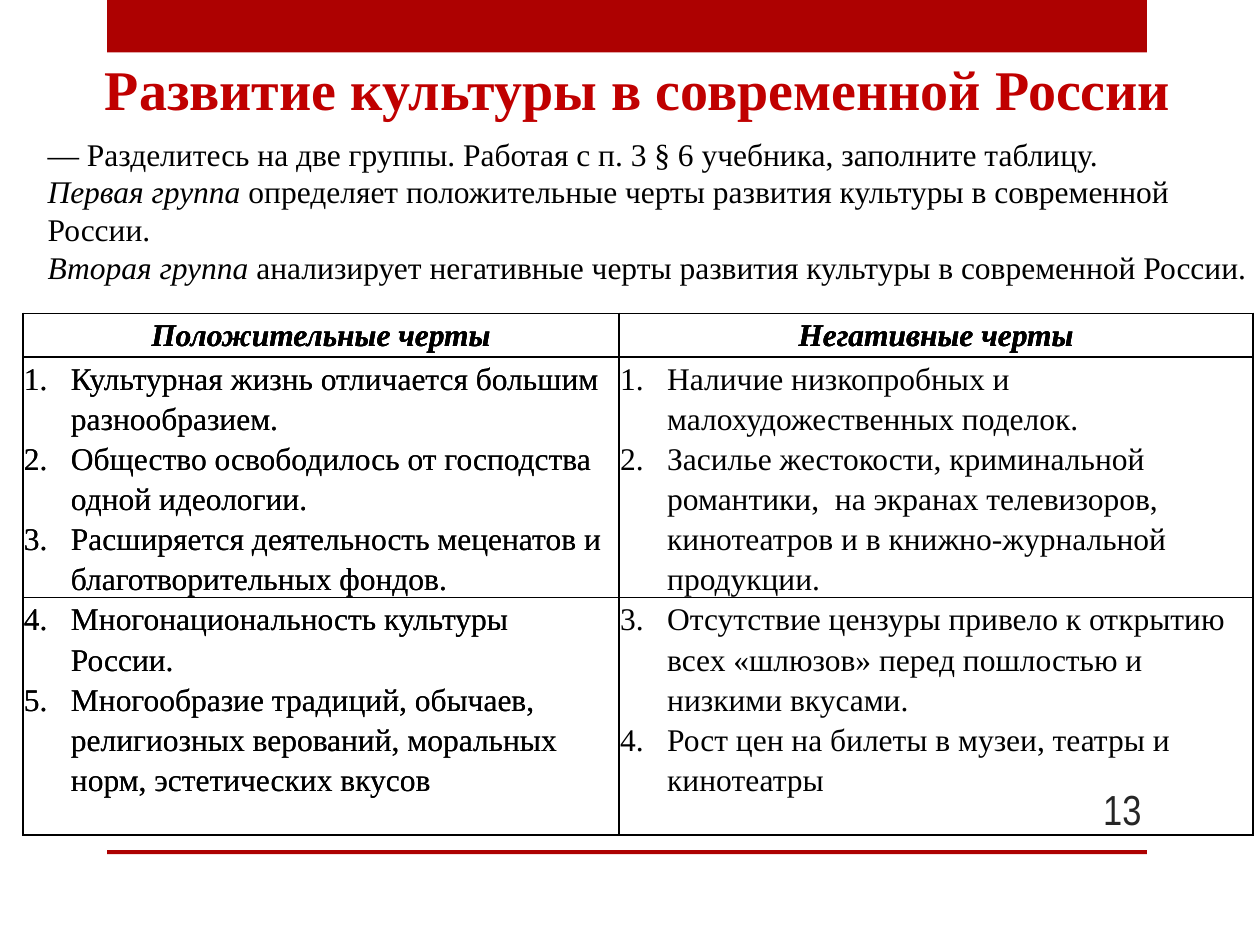
from lxml.etree import SubElement
from pptx import Presentation
from pptx.dml.color import RGBColor
from pptx.enum.shapes import MSO_SHAPE
from pptx.enum.text import MSO_ANCHOR as Anchor, MSO_AUTO_SIZE as AutoSize, PP_ALIGN as Align
from pptx.oxml import parse_xml
from pptx.oxml.ns import nsdecls, qn
from pptx.util import Cm, Pt

SERIF = "Times New Roman"
BLACK = "000000"
HEADERS = ["Положительные черты", "Негативные черты"]
POSITIVE = [
    "Культурная жизнь отличается большим разнообразием.",
    "Общество освободилось от господства одной идеологии.",
    "Расширяется деятельность меценатов и благотворительных фондов.",
    "Многонациональность культуры России.",
    "Многообразие традиций, обычаев, религиозных верований, моральных норм, эстетических вкусов",
]
NEGATIVE = [
    "Наличие низкопробных и малохудожественных поделок.",
    "Засилье жестокости, криминальной романтики,  на экранах телевизоров, "
    "кинотеатров и в книжно-журнальной продукции.",
    "Отсутствие цензуры привело к открытию всех «шлюзов» перед пошлостью и низкими вкусами.",
    "Рост цен на билеты в музеи, театры и кинотеатры",
]
TASK = [
    [("— Разделитесь на две группы. Работая с п. 3 § 6 учебника, заполните таблицу.", False)],
    [("Первая группа", True),
     (" определяет положительные черты развития культуры в современной России.", False)],
    [("Вторая группа", True),
     (" анализирует негативные черты развития культуры в современной России.", False)],
]


def color(value):
    return RGBColor.from_string(value)


def add_run(paragraph, text, size=18, font=SERIF, fill=BLACK, bold=False, italic=False):
    run = paragraph.add_run()
    run.text = text
    run.font.size = Pt(size)
    run.font.name = font
    run.font.color.rgb = color(fill)
    run.font.bold = bold
    run.font.italic = italic


def next_paragraph(frame, index):
    return frame.paragraphs[0] if index == 0 else frame.add_paragraph()


def add_bar(slide, top, height):
    shape = slide.shapes.add_shape(MSO_SHAPE.RECTANGLE, Cm(2.16), Cm(top), Cm(20.96), Cm(height))
    shape.shadow.inherit = False
    shape.fill.solid()
    shape.fill.fore_color.rgb = color("AD0101")
    shape.line.fill.background()


def add_text(slide, left, top, width, height, wrap=True, fit=AutoSize.SHAPE_TO_FIT_TEXT):
    frame = slide.shapes.add_textbox(Cm(left), Cm(top), Cm(width), Cm(height)).text_frame
    frame.word_wrap = wrap
    frame.auto_size = fit
    return frame


def format_cell(cell):
    cell.margin_left = cell.margin_right = Cm(0.02)
    cell.margin_top = cell.margin_bottom = 0
    cell.fill.background()
    properties = cell._tc.get_or_add_tcPr()
    for index, side in enumerate("LRTB"):
        properties.insert(index, parse_xml(
            f'<a:ln{side} {nsdecls("a")} w="{Pt(1)}"><a:solidFill>'
            f'<a:srgbClr val="{BLACK}"/></a:solidFill></a:ln{side}>'))


def number_paragraph(paragraph):
    properties = paragraph._p.get_or_add_pPr()
    properties.set("marL", str(Cm(0.95)))
    properties.set("indent", str(-Cm(0.95)))
    SubElement(SubElement(properties, qn("a:buClr")), qn("a:srgbClr")).set("val", BLACK)
    SubElement(properties, qn("a:buFont")).set("typeface", "+mj-lt")
    SubElement(properties, qn("a:buAutoNum")).set("type", "arabicPeriod")


def add_features_table(slide, body_height, columns):
    header_height = 0.88
    frame = slide.shapes.add_table(2, 2, Cm(0.46), Cm(6.32), Cm(24.8), Cm(header_height + body_height))
    table = frame.table
    table.rows[0].height = Cm(header_height)
    table.rows[1].height = Cm(body_height)
    for index, (width, header, items) in enumerate(zip((12.02, 12.78), HEADERS, columns)):
        table.columns[index].width = Cm(width)
        header_cell, body_cell = table.cell(0, index), table.cell(1, index)
        format_cell(header_cell)
        format_cell(body_cell)
        paragraph = header_cell.text_frame.paragraphs[0]
        paragraph.alignment = Align.CENTER
        paragraph.line_spacing = 1.15
        add_run(paragraph, header, bold=True, italic=True)
        for position, item in enumerate(items):
            paragraph = next_paragraph(body_cell.text_frame, position)
            paragraph.line_spacing = 1.15
            number_paragraph(paragraph)
            add_run(paragraph, item)


def main():
    presentation = Presentation()
    presentation.slide_width, presentation.slide_height = Cm(25.4), Cm(19.05)
    slide = presentation.slides.add_slide(presentation.slide_layouts[6])

    add_bar(slide, 0, 1.06)
    add_bar(slide, 17.14, 0.08)

    number = add_text(slide, 21.16, 15.8, 2.1, 1.02, fit=AutoSize.NONE)
    number.vertical_anchor = Anchor.MIDDLE
    number.paragraphs[0].alignment = Align.RIGHT
    add_run(number.paragraphs[0], "13", 24, "Arial Narrow", "262626")

    task = add_text(slide, 0.71, 2.59, 25.1, 3.33)
    for index, runs in enumerate(TASK):
        paragraph = next_paragraph(task, index)
        for text, italic in runs:
            add_run(paragraph, text, italic=italic)

    title = add_text(slide, 1.75, 0.97, 22.23, 1.63, wrap=False)
    title.paragraphs[0].alignment = Align.CENTER
    add_run(title.paragraphs[0], "Развитие культуры в современной России", 32, fill="C00000", bold=True)

    add_features_table(slide, 4.85, ([], []))
    add_features_table(slide, 9.63, (POSITIVE, []))
    add_features_table(slide, 9.63, (POSITIVE, NEGATIVE))

    presentation.save("out.pptx")


if __name__ == "__main__":
    main()
